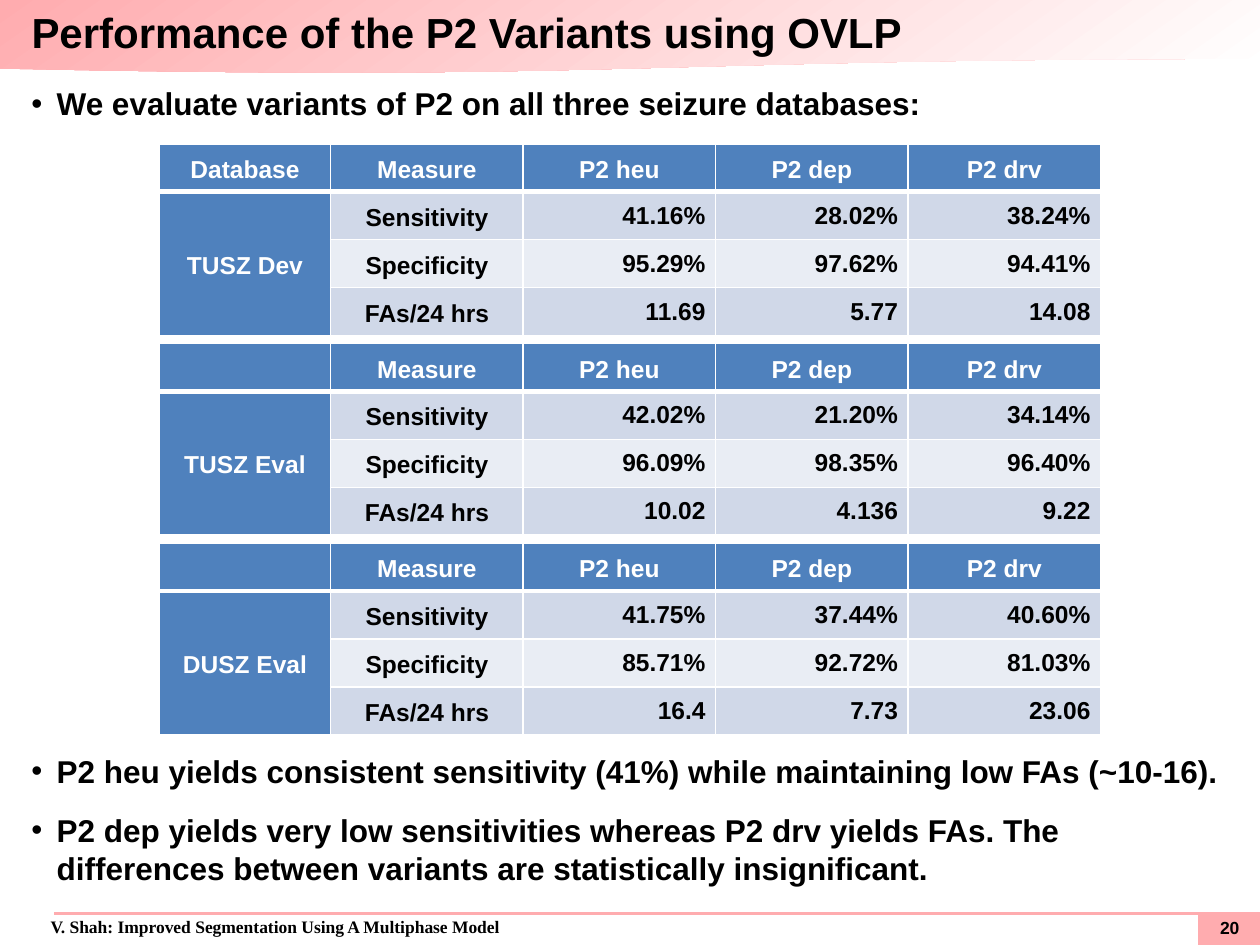
import lxml.etree
import pptx
import pptx.dml.color
import pptx.enum.shapes
import pptx.enum.text
import pptx.oxml.ns
import pptx.util

Pt = pptx.util.Pt
Align = pptx.enum.text.PP_ALIGN
Anchor = pptx.enum.text.MSO_ANCHOR
Preset = pptx.enum.shapes.MSO_SHAPE
qn = pptx.oxml.ns.qn

PINK, WHITE, BLACK = "FFACAF", "FFFFFF", "000000"
HEADER_BLUE = "4F81BD"
BAND_COLORS = ["D0D8E8", "E9EDF4", "D0D8E8"]

VARIANTS = ["P2 heu", "P2 dep", "P2 drv"]
MEASURES = ["Sensitivity", "Specificity", "FAs/24 hrs"]
# Each result: corner heading, database, then one row of scores per measure.
RESULTS = [
    ("Database", "TUSZ Dev", [["41.16%", "28.02%", "38.24%"],
                              ["95.29%", "97.62%", "94.41%"],
                              ["11.69", "5.77", "14.08"]]),
    ("", "TUSZ Eval", [["42.02%", "21.20%", "34.14%"],
                       ["96.09%", "98.35%", "96.40%"],
                       ["10.02", "4.136", "9.22"]]),
    ("", "DUSZ Eval", [["41.75%", "37.44%", "40.60%"],
                       ["85.71%", "92.72%", "81.03%"],
                       ["16.4", "7.73", "23.06"]]),
]
# Each finding: text and the space after it, the first leaving room for the tables.
FINDINGS = [
    ("We evaluate variants of P2 on all three seizure databases:", 360),
    ("P2 heu yields consistent sensitivity (41%) while maintaining low FAs (~10-16).", 12),
    ("P2 dep yields very low sensitivities whereas P2 drv yields FAs. "
     "The differences between variants are statistically insignificant.", 12),
]
TABLE_LEFT, TABLE_TOP, TABLE_PITCH = 91, 82.2, 114.1
COLUMN_WIDTHS = [98, 110, 110, 110, 110]
ROW_HEIGHT = 27.4


def rgb(hex_color):
    return pptx.dml.color.RGBColor.from_string(hex_color)


def box(left, top, width, height):
    return Pt(left), Pt(top), Pt(width), Pt(height)


def add_run(paragraph, text, size, color=BLACK, font_name="Arial"):
    run = paragraph.add_run()
    run.text = text
    run.font.size = Pt(size)
    run.font.name = font_name
    run.font.bold = True
    run.font.color.rgb = rgb(color)


def set_margins(area, horizontal, vertical):
    """Set the insets of a text frame or a table cell."""
    area.margin_left = area.margin_right = Pt(horizontal)
    area.margin_top = area.margin_bottom = Pt(vertical)


def add_text_box(slide, place, margin=0):
    frame = slide.shapes.add_textbox(*place).text_frame
    frame.word_wrap = True
    set_margins(frame, margin, margin)
    return frame


def add_block(slide, preset, place):
    block = slide.shapes.add_shape(preset, *place)
    block.shadow.inherit = False
    block.line.fill.background()
    return block


def add_banner(slide):
    banner = add_block(slide, Preset.FLOWCHART_DOCUMENT, box(0, 0, 720.5, 42))
    banner.fill.gradient()
    banner.fill.gradient_angle = 305
    for stop, color, position in zip(banner.fill.gradient_stops, [PINK, WHITE], [0, 1]):
        stop.color.rgb = rgb(color)
        stop.position = position


def add_footer(slide):
    number_block = add_block(slide, Preset.RECTANGLE, box(684.7, 521.3, 36, 18.7))
    number_block.fill.solid()
    number_block.fill.fore_color.rgb = rgb(PINK)

    author_line = add_text_box(slide, box(3, 520.6, 681, 18.7), 3.6).paragraphs[0]
    author_line.line_spacing = 0.95
    author_line._p.get_or_add_pPr().set("marL", str(Pt(22.3)))
    add_run(author_line, "V. Shah: Improved Segmentation Using A Multiphase Model",
            10, font_name="Times New Roman")

    rule = slide.shapes.add_connector(
        pptx.enum.shapes.MSO_CONNECTOR.STRAIGHT, Pt(31), Pt(522), Pt(720), Pt(522))
    rule.line.color.rgb = rgb(PINK)
    rule.line.width = Pt(1.5)
    lxml.etree.SubElement(rule._element.spPr, qn("a:effectLst"))

    number_frame = add_text_box(slide, box(688.3, 524.2, 28.8, 12.2))
    number_frame.vertical_anchor = Anchor.MIDDLE
    number_frame.paragraphs[0].alignment = Align.CENTER
    add_run(number_frame.paragraphs[0], "20", 10)


def format_title(slide):
    title = slide.shapes.title
    title.left, title.top, title.width, title.height = box(18, 0, 684, 36)
    slide.shapes._spTree.append(title._element)  # in front of the banner
    frame = title.text_frame
    frame.auto_size = pptx.enum.text.MSO_AUTO_SIZE.NONE
    frame.word_wrap = False
    frame.vertical_anchor = Anchor.MIDDLE
    set_margins(frame, 0, 0)
    frame.paragraphs[0].alignment = Align.LEFT
    add_run(frame.paragraphs[0], "Performance of the P2 Variants using OVLP", 24)


def add_borders(cell, top, bottom):
    """Draw white borders, 1 pt wide at the sides."""
    properties = cell._tc.get_or_add_tcPr()
    for side, width in zip("LRTB", [1, 1, top, bottom]):
        border = lxml.etree.SubElement(properties, qn("a:ln" + side), w=str(Pt(width)))
        fill = lxml.etree.SubElement(border, qn("a:solidFill"))
        lxml.etree.SubElement(fill, qn("a:srgbClr"), val=WHITE)


def fill_cell(cell, text, row, column):
    is_heading = row == 0 or column == 0
    is_score = row > 0 and column > 1
    add_borders(cell, 3 if row == 1 else 1, 3 if row == 0 else 1)
    cell.fill.solid()
    cell.fill.fore_color.rgb = rgb(HEADER_BLUE if is_heading else BAND_COLORS[row - 1])
    cell.vertical_anchor = Anchor.MIDDLE
    set_margins(cell, 5.8 if is_score else 5, 1.4 if is_score else 0)
    if text:
        paragraph = cell.text_frame.paragraphs[0]
        paragraph.alignment = Align.RIGHT if is_score else Align.CENTER
        if not is_score:
            paragraph.line_spacing = 1.15
        add_run(paragraph, text, 14, WHITE if is_heading else BLACK)


def add_result_table(slide, top, corner, database, scores):
    rows = [[corner, "Measure"] + VARIANTS]
    for index, (measure, values) in enumerate(zip(MEASURES, scores)):
        rows.append([database if index == 0 else "", measure] + values)
    table = slide.shapes.add_table(
        len(rows), len(COLUMN_WIDTHS),
        *box(TABLE_LEFT, top, sum(COLUMN_WIDTHS), ROW_HEIGHT * len(rows))).table
    table.horz_banding = False
    for column, width in zip(table.columns, COLUMN_WIDTHS):
        column.width = Pt(width)
    for r, texts in enumerate(rows):
        table.rows[r].height = Pt(ROW_HEIGHT)
        for c, text in enumerate(texts):
            fill_cell(table.cell(r, c), text, r, c)
    table.cell(1, 0).merge(table.cell(len(MEASURES), 0))


def add_findings(slide):
    frame = add_text_box(slide, box(18, 48.2, 684, 489.6))
    for index, (finding, space_after) in enumerate(FINDINGS):
        paragraph = frame.add_paragraph() if index else frame.paragraphs[0]
        paragraph.space_after = Pt(space_after)
        properties = paragraph._p.get_or_add_pPr()
        properties.set("marL", str(Pt(14.4)))
        properties.set("indent", str(-Pt(14.4)))
        lxml.etree.SubElement(properties, qn("a:buFont"), typeface="Arial")
        lxml.etree.SubElement(properties, qn("a:buChar"), char="•")
        add_run(paragraph, finding, 18)


def main():
    deck = pptx.Presentation()
    deck.slide_width, deck.slide_height = Pt(720), Pt(540)
    slide = deck.slides.add_slide(deck.slide_layouts.get_by_name("Title Only"))
    add_banner(slide)
    add_footer(slide)
    format_title(slide)
    for index, result in enumerate(RESULTS):
        add_result_table(slide, TABLE_TOP + index * TABLE_PITCH, *result)
    add_findings(slide)
    deck.save("out.pptx")


if __name__ == "__main__":
    main()
